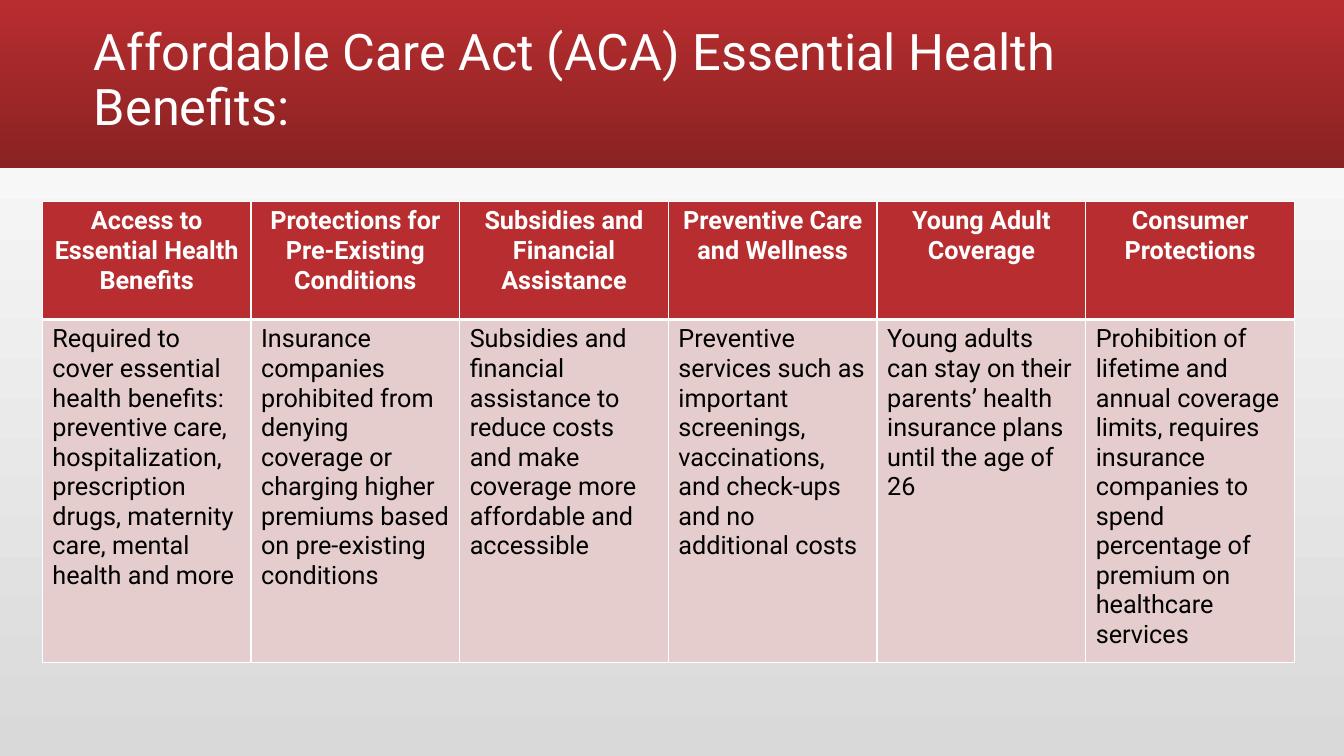
import pptx
import pptx.util
import pptx.dml.color
import pptx.enum.shapes
import pptx.enum.text
import pptx.oxml
import pptx.oxml.ns

WIDE, HIGH = 13.33, 7.5
FONT = "Roboto"
HUES = {"red": "B82D2F", "dark": "8A2223", "pink": "E6CDCD",
        "grey": "D9D9D9", "white": "FFFFFF", "black": "000000"}
TITLE = "Affordable Care Act (ACA) Essential Health Benefits:"
TOPICS = [
    ("Access to Essential Health Benefits",
     "Required to cover essential health benefits: preventive care, hospitalization, "
     "prescription drugs, maternity care, mental health and more"),
    ("Protections for Pre-Existing Conditions",
     "Insurance companies prohibited from denying coverage or charging higher "
     "premiums based on pre-existing conditions"),
    ("Subsidies and Financial Assistance",
     "Subsidies and financial assistance to reduce costs and make coverage more "
     "affordable and accessible"),
    ("Preventive Care and Wellness",
     "Preventive services such as important screenings, vaccinations, and check-ups "
     "and no additional costs"),
    ("Young Adult Coverage",
     "Young adults can stay on their parents’ health insurance plans until the age of 26"),
    ("Consumer Protections",
     "Prohibition of lifetime and annual coverage limits, requires insurance companies "
     "to spend percentage of premium on healthcare services"),
]
ALIGN = pptx.enum.text.PP_ALIGN


def inch(*sizes):
    return [pptx.util.Inches(size) for size in sizes]


def color(name):
    return pptx.dml.color.RGBColor.from_string(HUES[name])


def blend(fill, first, last, angle):
    fill.gradient()
    fill.gradient_angle = angle
    for stop, name in zip(fill.gradient_stops, (first, last)):
        stop.color.rgb = color(name)


def style(para, size, hue, bold=False):
    for run in para.runs:
        font = run.font
        font.name, font.size, font.bold = FONT, pptx.util.Pt(size), bold
        font.color.rgb = color(hue)


def edge(cell, base):
    """White borders, one point wide except for the base line."""
    props = cell._tc.get_or_add_tcPr()
    for spot, (side, width) in enumerate(
            (("L", 1), ("R", 1), ("T", base if base == 1 else 1), ("B", base))):
        props.insert(spot, pptx.oxml.parse_xml(
            f'<a:ln{side} {pptx.oxml.ns.nsdecls("a")} w="{pptx.util.Pt(width)}">'
            f'<a:solidFill><a:srgbClr val="{HUES["white"]}"/></a:solidFill></a:ln{side}>'))


def banner(slide, left, top, width, height):
    # Red band
    band = slide.shapes.add_shape(pptx.enum.shapes.MSO_SHAPE.RECTANGLE,
                                  *inch(left, top, width, height))
    band.shadow.inherit = False
    band.line.fill.background()
    blend(band.fill, "red", "dark", 270)
    # Title
    box = slide.shapes.add_textbox(
        *inch(left + width / 16, top + height * 0.05, width * 0.87, height * 0.87))
    frame = box.text_frame
    frame.word_wrap = True
    frame.vertical_anchor = pptx.enum.text.MSO_ANCHOR.MIDDLE
    frame.text = TITLE
    para = frame.paragraphs[0]
    para.line_spacing = 0.9
    style(para, 36, "white")


def grid(slide, left, top, width, height):
    table = slide.shapes.add_table(2, len(TOPICS), *inch(left, top, width, height)).table
    for row, share in zip(table.rows, (0.26, 0.74)):
        row.height = pptx.util.Inches(height * share)
    # Head cell above body cell, one column for each topic
    looks = (("red", "white", True, ALIGN.CENTER, 3),
             ("pink", "black", False, ALIGN.LEFT, 1))
    for col, topic in enumerate(TOPICS):
        for row, (back, ink, bold, align, base) in enumerate(looks):
            cell = table.cell(row, col)
            cell.fill.solid()
            cell.fill.fore_color.rgb = color(back)
            cell.text_frame.text = topic[row]
            para = cell.text_frame.paragraphs[0]
            para.alignment = align
            style(para, 18, ink, bold)
            # The line under the head is shared by both rows
            edge(cell, base)
            if row:
                line = cell._tc.tcPr.find(pptx.oxml.ns.qn("a:lnT"))
                line.set("w", str(pptx.util.Pt(3)))


def main():
    deck = pptx.Presentation()
    deck.slide_width, deck.slide_height = inch(WIDE, HIGH)
    slide = deck.slides.add_slide(deck.slide_layouts[6])
    blend(slide.background.fill, "grey", "white", 90)
    banner(slide, 0, 0, WIDE, HIGH / 4.5)
    grid(slide, 0.42, 2, 12.42, HIGH * 0.6)
    deck.save("out.pptx")


if __name__ == "__main__":
    main()
